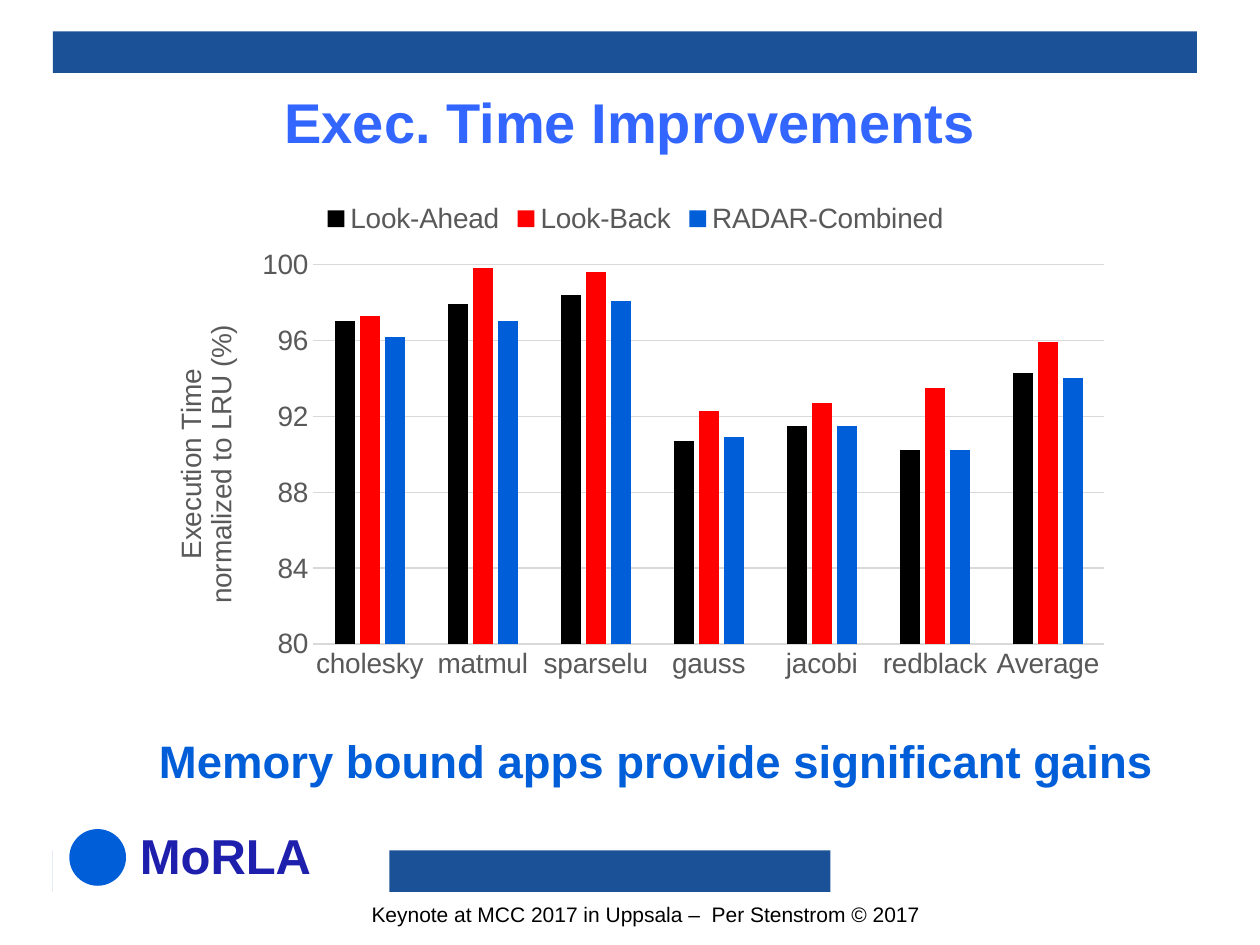
from pptx import Presentation
from pptx.chart.data import CategoryChartData
from pptx.dml.color import RGBColor
from pptx.enum.chart import XL_CHART_TYPE, XL_LEGEND_POSITION, XL_TICK_MARK
from pptx.enum.shapes import MSO_SHAPE
from pptx.enum.text import MSO_ANCHOR, PP_ALIGN
from pptx.util import Inches, Pt

COLORS = {
    "bar": "1B5196", "white": "FFFFFF", "black": "000000", "title": "3366FF",
    "blue": "005ED9", "red": "FF0000", "navy": "1F1FAD", "label": "595959",
    "grid": "D9D9D9",
}
CATEGORIES = ["cholesky", "matmul", "sparselu", "gauss", "jacobi", "redblack", "Average"]
SERIES = [
    ("Look-Ahead", "black", [97, 97.9, 98.4, 90.7, 91.5, 90.2, 94.3]),
    ("Look-Back", "red", [97.3, 99.8, 99.6, 92.3, 92.7, 93.5, 95.9]),
    ("RADAR-Combined", "blue", [96.2, 97, 98.1, 90.9, 91.5, 90.2, 94]),
]


def set_attributes(target, values):
    """Set every attribute named in a dict of format values."""
    for name, value in values.items():
        setattr(target, name, value)


def format_font(font, size, color, bold=False):
    """Apply typeface, size, weight and colour to a font."""
    set_attributes(font, {"name": "Arial", "size": Pt(size), "bold": bold})
    font.color.rgb = RGBColor.from_string(COLORS[color])


def format_line(line, color):
    """Give a line its colour and the thin width."""
    line.color.rgb = RGBColor.from_string(COLORS[color])
    line.width = Pt(0.75)


def add_block(slide, box, color, preset=MSO_SHAPE.RECTANGLE):
    """Add a plain filled shape without outline or shadow."""
    shape = slide.shapes.add_shape(preset, *map(Inches, box))
    shape.shadow.inherit = False
    shape.fill.solid()
    shape.fill.fore_color.rgb = RGBColor.from_string(COLORS[color])
    shape.line.fill.background()
    return shape


def write_text(shape, text, size, color, bold=True, wrap=True,
               anchor=MSO_ANCHOR.MIDDLE, alignment=PP_ALIGN.CENTER):
    """Write one formatted paragraph into a shape."""
    frame = shape.text_frame
    set_attributes(frame, {"word_wrap": wrap, "vertical_anchor": anchor})
    paragraph = frame.paragraphs[0]
    set_attributes(paragraph, {"text": text, "alignment": alignment})
    format_font(paragraph.runs[0].font, size, color, bold)


def add_text(slide, box, *content, **layout):
    """Add a text box holding one paragraph."""
    write_text(slide.shapes.add_textbox(*map(Inches, box)), *content, **layout)


def add_header(slide, box):
    """Place the top bar and the title below it."""
    left, top, width, _ = box
    add_block(slide, (left, top, width, 0.33), "bar")
    add_text(slide, (left + 0.08, top + 0.17, 9, 1.08), "Exec. Time Improvements", 32, "title")


def add_footer(slide, box):
    """Place the bottom bar, the project mark and the copyright line."""
    left, top, width, _ = box
    add_block(slide, (left, top + 0.33, width, 0.33), "bar")
    add_block(slide, (left, top, 2.67, 0.67), "white")
    add_block(slide, (left + 0.13, top + 0.16, 0.45, 0.45), "blue", MSO_SHAPE.OVAL)
    add_text(slide, (left + 0.41, top + 0.08, 1.92, 0.57), "MoRLA", 28, "navy")
    add_text(slide, (left + 2.43, top + 0.69, 4.69, 0.3),
             "Keynote at MCC 2017 in Uppsala –  Per Stenstrom © 2017", 12, "black",
             bold=False, wrap=False, anchor=MSO_ANCHOR.TOP, alignment=PP_ALIGN.LEFT)


def format_axes(chart):
    """Set the scale, lines, labels and title of both axes."""
    category_axis, value_axis = chart.category_axis, chart.value_axis
    for axis in (category_axis, value_axis):
        set_attributes(axis, {"major_tick_mark": XL_TICK_MARK.NONE,
                              "minor_tick_mark": XL_TICK_MARK.NONE})
        format_font(axis.tick_labels.font, 16, "label")
    format_line(category_axis.format.line, "grid")
    set_attributes(value_axis, {"minimum_scale": 80, "maximum_scale": 100,
                                "major_unit": 4, "has_major_gridlines": True})
    value_axis.format.line.fill.background()
    format_line(value_axis.major_gridlines.format.line, "grid")
    set_attributes(value_axis.tick_labels, {"number_format": "General",
                                            "number_format_is_linked": False})
    frame = value_axis.axis_title.text_frame
    frame.text = "Execution Time\nnormalized to LRU (%)"
    for paragraph in frame.paragraphs:
        format_font(paragraph.runs[0].font, 16, "label")


def add_time_chart(slide, box):
    """Place the clustered column chart of execution times."""
    data = CategoryChartData()
    data.categories = CATEGORIES
    for name, _, values in SERIES:
        data.add_series(name, values)
    chart = slide.shapes.add_chart(
        XL_CHART_TYPE.COLUMN_CLUSTERED, *map(Inches, box), data).chart
    format_font(chart.font, 16, "black")
    set_attributes(chart, {"has_title": False, "has_legend": True})
    set_attributes(chart.legend, {"position": XL_LEGEND_POSITION.TOP,
                                  "include_in_layout": False})
    format_font(chart.legend.font, 16, "label")
    plot = chart.plots[0]
    set_attributes(plot, {"gap_width": 219, "overlap": -27, "vary_by_categories": False})
    for series, (_, color, _) in zip(plot.series, SERIES):
        series.format.fill.solid()
        series.format.fill.fore_color.rgb = RGBColor.from_string(COLORS[color])
    format_axes(chart)


def add_conclusion(slide, box):
    """Place the closing statement on a white band."""
    band = add_block(slide, box, "white")
    write_text(band, "Memory bound apps provide significant gains", 26, "blue")


def main():
    """Build the slide and save it."""
    presentation = Presentation()
    set_attributes(presentation, {"slide_width": Inches(10), "slide_height": Inches(7.5)})
    slide = presentation.slides.add_slide(presentation.slide_layouts[6])
    add_footer(slide, (0.42, 6.42, 6.17, 0.99))
    add_header(slide, (0.42, 0.25, 9.08, 1.25))
    add_time_chart(slide, (1.17, 1.5, 7.75, 3.97))
    add_conclusion(slide, (0.17, 5.8, 10.08, 0.47))
    presentation.save("out.pptx")


if __name__ == "__main__":
    main()
